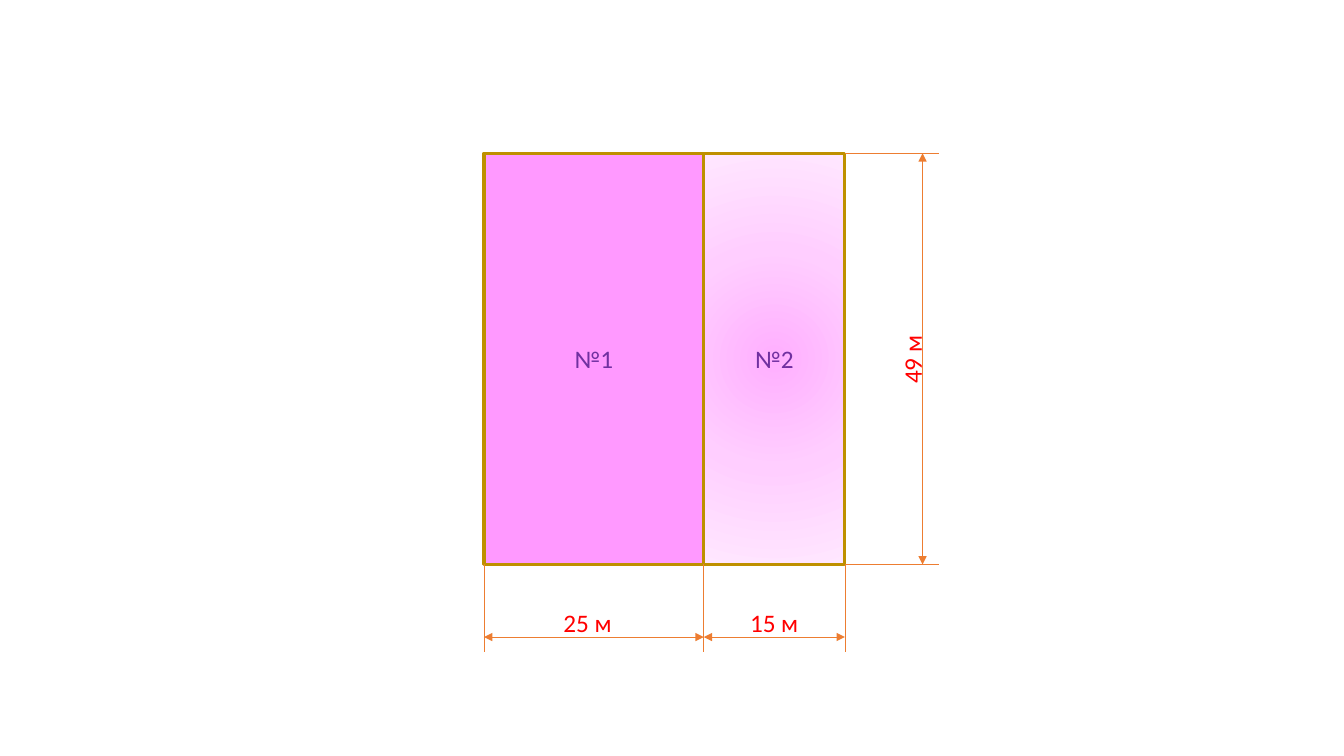
from lxml.etree import SubElement
from pptx import Presentation
from pptx.dml.color import RGBColor
from pptx.enum.shapes import MSO_CONNECTOR, MSO_SHAPE
from pptx.enum.text import MSO_ANCHOR, MSO_AUTO_SIZE, PP_ALIGN
from pptx.oxml.ns import qn
from pptx.util import Inches, Pt

COLORS = {
    "plot": "FF99FF",
    "border": "BF9000",
    "number": "7030A0",
    "dimension": "ED7D31",
    "measure": "FF0000",
}
GLOW = {0: "FFAFFF", 50: "FFCEFF", 100: "FFE7FF"}
TEXT_FORMAT = {"name": "Calibri", "size": Pt(18)}
LEFT, MIDDLE, RIGHT = 4.8, 6.98, 8.38
TOP, BOTTOM = 1.52, 5.6
ROW, COLUMN = 6.32, 9.15
ROW_END, COLUMN_END = 6.47, 9.31


def color(name):
    """Return the named palette color."""
    return RGBColor.from_string(COLORS[name])


def write(frame, text, color_name, alignment=None):
    """Write one formatted line into a text frame."""
    para = frame.paragraphs[0]
    para.alignment = alignment
    span = para.add_run()
    span.text = text
    for key, value in TEXT_FORMAT.items():
        setattr(span.font, key, value)
    span.font.color.rgb = color(color_name)


def glow(shape):
    """Fill a shape with a circular gradient from its center."""
    shape.fill.gradient()
    gradient = shape._element.spPr.find(qn("a:gradFill"))
    for child in list(gradient):
        gradient.remove(child)
    stops = SubElement(gradient, qn("a:gsLst"))
    for percent, value in GLOW.items():
        stop = SubElement(stops, qn("a:gs"), pos=str(percent * 1000))
        SubElement(stop, qn("a:srgbClr"), val=value)
    circle = SubElement(gradient, qn("a:path"), path="circle")
    SubElement(circle, qn("a:fillToRect"), l="50000", t="50000", r="50000", b="50000")


def add_plot(page, box, text, glowing):
    """Draw one numbered plot of land in its box."""
    plot = page.shapes.add_shape(MSO_SHAPE.RECTANGLE, *map(Inches, box))
    plot.shadow.inherit = False
    if glowing:
        glow(plot)
    else:
        plot.fill.solid()
        plot.fill.fore_color.rgb = color("plot")
    plot.line.color.rgb = color("border")
    plot.line.width = Pt(2.25)
    plot.text_frame.vertical_anchor = MSO_ANCHOR.MIDDLE
    write(plot.text_frame, text, "number", PP_ALIGN.CENTER)


def add_line(page, start, end, arrows=False):
    """Draw a thin dimension line, with arrowheads at both ends if asked."""
    line = page.shapes.add_connector(MSO_CONNECTOR.STRAIGHT, *map(Inches, start + end))
    line.line.color.rgb = color("dimension")
    line.line.width = Pt(0.5)
    properties = line._element.spPr
    if arrows:
        outline = properties.find(qn("a:ln"))
        for tag in ("a:headEnd", "a:tailEnd"):
            SubElement(outline, qn(tag), type="triangle")
    SubElement(properties, qn("a:effectLst"))


def add_measure(page, box, text, wrap=False, rotation=0):
    """Write a length beside its dimension line."""
    label = page.shapes.add_textbox(*map(Inches, box))
    label.rotation = rotation
    label.text_frame.word_wrap = wrap
    label.text_frame.auto_size = MSO_AUTO_SIZE.SHAPE_TO_FIT_TEXT
    write(label.text_frame, text, "measure")


def add_plan(page):
    """Draw the two plots with their dimensions."""
    add_plot(page, (LEFT, TOP, MIDDLE - LEFT, BOTTOM - TOP), "№1", False)
    add_plot(page, (MIDDLE, TOP, RIGHT - MIDDLE, BOTTOM - TOP), "№2", True)
    for y in (TOP, BOTTOM):
        add_line(page, (RIGHT, y), (COLUMN_END, y))
    add_line(page, (COLUMN, TOP), (COLUMN, BOTTOM), arrows=True)
    for x in (LEFT, RIGHT, MIDDLE):
        add_line(page, (x, BOTTOM), (x, ROW_END))
    for start, end in ((LEFT, MIDDLE), (MIDDLE, RIGHT)):
        add_line(page, (start, ROW), (end, ROW), arrows=True)
    add_measure(page, (5.49, 5.98, 0.79, 0.4), "25 м", wrap=True)
    add_measure(page, (7.34, 5.98, 0.69, 0.4), "15 м")
    add_measure(page, (8.7, 3.36, 0.69, 0.4), "49 м", rotation=270)


def main():
    """Build and save the deck."""
    deck = Presentation()
    deck.slide_width, deck.slide_height = Inches(13.33), Inches(7.5)
    add_plan(deck.slides.add_slide(deck.slide_layouts[6]))
    deck.save("out.pptx")


if __name__ == "__main__":
    main()
